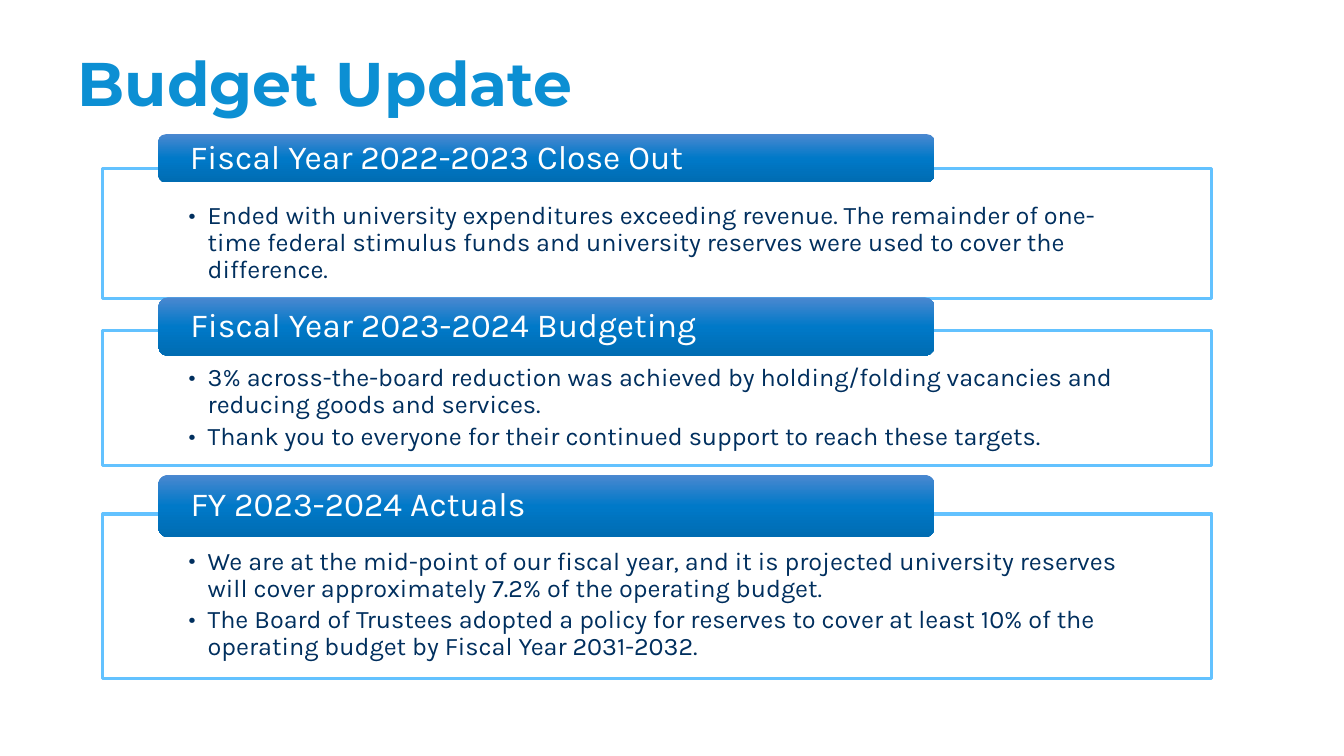
from lxml import etree
from pptx import Presentation
from pptx.dml.color import RGBColor
from pptx.enum import shapes, text
from pptx.oxml import ns, parse_xml
from pptx.util import Inches, Pt

COLORS = {
    "title": "0C8FD3", "body": "002F5E", "border": "63C2FF", "white": "FFFFFF",
    "bar_top": "4B88D0", "bar_middle": "0079C8", "bar_bottom": "006CB2",
}


def add_run(paragraph, words, font, size, color, bold=False):
    run = paragraph.add_run()
    run.text = words
    run.font.name = font
    run.font.size = Pt(size)
    run.font.bold = bold
    run.font.color.rgb = RGBColor.from_string(COLORS[color])


def set_frame(frame, anchor, left, top, right, bottom):
    frame.word_wrap = True
    frame.auto_size = text.MSO_AUTO_SIZE.NONE
    frame.vertical_anchor = anchor
    frame.margin_left, frame.margin_top = Inches(left), Inches(top)
    frame.margin_right, frame.margin_bottom = Inches(right), Inches(bottom)


sections = [
    ("Fiscal Year 2022-2023 Close Out", 1.33, 0.48, 1.67, 1.29, [
        "Ended with university expenditures exceeding revenue. The remainder of one-time federal "
        "stimulus funds and university reserves were used to cover the difference."]),
    ("Fiscal Year 2023-2024 Budgeting", 2.95, 0.58, 3.28, 1.34, [
        "3% across-the-board reduction was achieved by holding/folding vacancies and reducing "
        "goods and services.",
        "Thank you to everyone for their continued support to reach these targets."]),
    ("FY 2023-2024 Actuals", 4.71, 0.62, 5.1, 1.63, [
        "We are at the mid-point of our fiscal year, and it is projected university reserves "
        "will cover approximately 7.2% of the operating budget.",
        "The Board of Trustees adopted a policy for reserves to cover at least 10% of the "
        "operating budget by Fiscal Year 2031-2032."]),
]

prs = Presentation()
prs.slide_width, prs.slide_height = Inches(13.33), Inches(7.5)
slide = prs.slides.add_slide(prs.slide_layouts[5])

title = slide.shapes.title
title.left, title.top = Inches(0.67), Inches(0.13)
title.width, title.height = Inches(11.5), Inches(1.45)
set_frame(title.text_frame, text.MSO_ANCHOR.MIDDLE, 0.1, 0.05, 0.1, 0.05)
heading = title.text_frame.paragraphs[0]
heading.alignment = text.PP_ALIGN.LEFT
heading.line_spacing = 0.9
add_run(heading, "Budget Update", "Montserrat", 44, "title", True)

for header, bar_top, bar_height, panel_top, panel_height, bullets in sections:
    panel = slide.shapes.add_shape(shapes.MSO_SHAPE.RECTANGLE, Inches(1.02), Inches(panel_top),
                                   Inches(11), Inches(panel_height))
    panel.shadow.inherit = False
    panel.fill.solid()
    panel.fill.fore_color.rgb = RGBColor.from_string(COLORS["white"])
    panel_color = panel.fill._xPr.find(ns.qn("a:solidFill"))[0]
    etree.SubElement(panel_color, ns.qn("a:alpha"), val="90000")
    panel.line.color.rgb = RGBColor.from_string(COLORS["border"])
    panel.line.width = Pt(2.25)
    set_frame(panel.text_frame, text.MSO_ANCHOR.TOP, 0.85, 0.34, 0.85, 0.14)
    for index, sentence in enumerate(bullets):
        bullet = panel.text_frame.paragraphs[0] if index == 0 else panel.text_frame.add_paragraph()
        properties = bullet._p.get_or_add_pPr()
        properties.set("marL", str(Inches(0.19)))
        properties.set("indent", str(Inches(-0.19)))
        etree.SubElement(properties, ns.qn("a:buFont"), typeface="Karla")
        etree.SubElement(properties, ns.qn("a:buChar"), char="•")
        bullet.alignment = text.PP_ALIGN.LEFT
        bullet.line_spacing = 0.9
        bullet.space_after = Pt(3)
        add_run(bullet, sentence, "Karla", 18, "body")

    bar = slide.shapes.add_shape(shapes.MSO_SHAPE.ROUNDED_RECTANGLE, Inches(1.57), Inches(bar_top),
                                 Inches(7.7), Inches(bar_height))
    bar.shadow.inherit = False
    bar.line.fill.background()
    stops = "".join(
        f'<a:gs pos="{position}"><a:srgbClr val="{COLORS[name]}"/></a:gs>'
        for position, name in ((0, "bar_top"), (50000, "bar_middle"), (100000, "bar_bottom")))
    gradient = parse_xml(f'<a:gradFill {ns.nsdecls("a")} rotWithShape="1"><a:gsLst>{stops}</a:gsLst>'
                         '<a:lin ang="5400000" scaled="0"/></a:gradFill>')
    bar._element.spPr.find(ns.qn("a:prstGeom")).addnext(gradient)
    set_frame(bar.text_frame, text.MSO_ANCHOR.MIDDLE, 0.29, 0, 0.29, 0)
    label = bar.text_frame.paragraphs[0]
    label.alignment = text.PP_ALIGN.LEFT
    label.line_spacing = 0.9
    add_run(label, header, "Karla", 24, "white")

prs.save("out.pptx")
